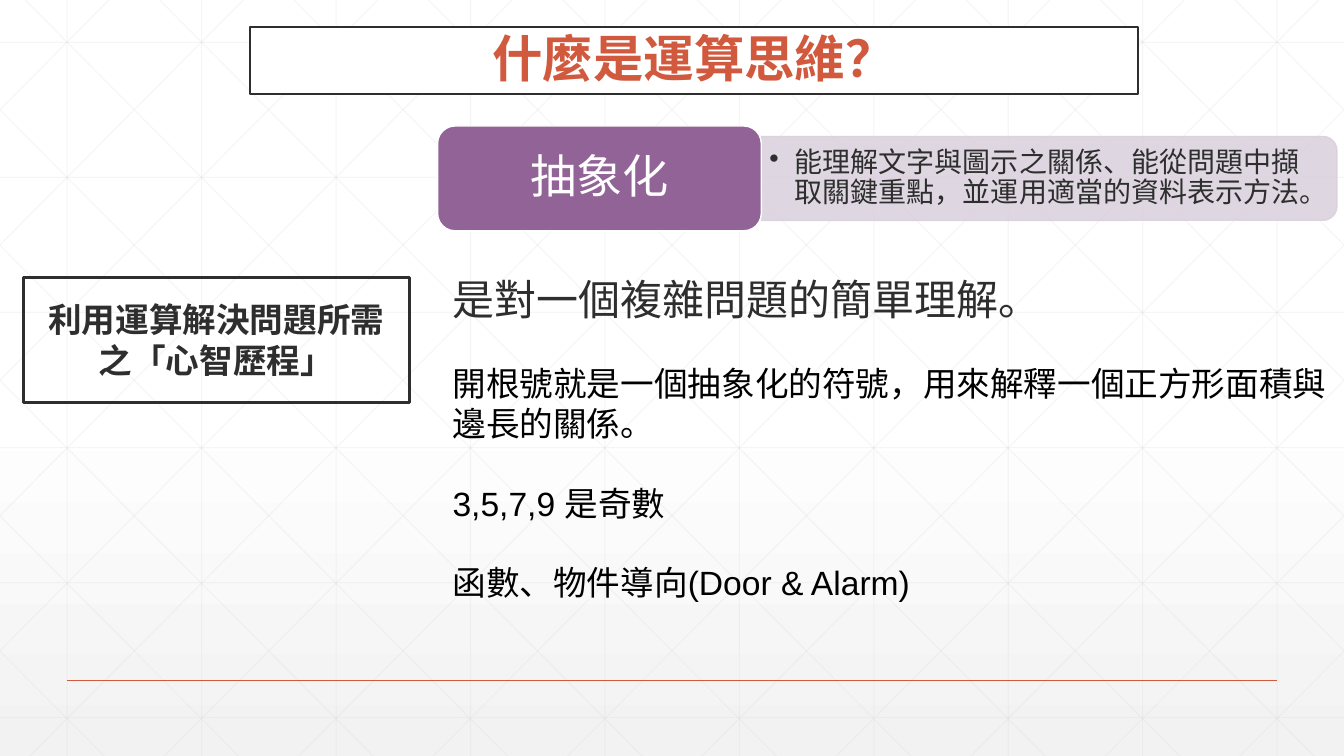
from pptx import Presentation
from pptx import util as u
from pptx.dml import color
from pptx.enum import shapes, text
from pptx.oxml import ns
from lxml import etree

WIDTH, HEIGHT = 13.33, 7.5
PITCH = 4 / 3
INK = color.RGBColor(0x2D, 0x2E, 0x2D)
BLACK = color.RGBColor(0, 0, 0)
WHITE = color.RGBColor(0xFF, 0xFF, 0xFF)
MIST = color.RGBColor(0xF2, 0xF2, 0xF2)
GRID = color.RGBColor(0xD8, 0xD8, 0xD8)
RUST = color.RGBColor(0xD1, 0x5A, 0x3E)
PURPLE = color.RGBColor(0x92, 0x63, 0x97)
LILAC = color.RGBColor(0xDB, 0xD1, 0xDD)
SHAPE = shapes.MSO_SHAPE
ANCHOR = text.MSO_ANCHOR
CENTER = text.PP_ALIGN.CENTER


def set_values(target, values):
    for name, value in values.items():
        setattr(target, name, value)


def set_alpha(shape, percent):
    for fill_color in shape.element.spPr.iter(ns.qn("a:srgbClr")):
        etree.SubElement(fill_color, ns.qn("a:alpha"), val=str(percent * 1000))


def place(shape, box):
    set_values(shape, dict(zip(("left", "top", "width", "height"), map(u.Inches, box))))


def paint(shape, fill=None, line=None, weight=1):
    if fill is None:
        shape.fill.background()
    else:
        shape.fill.solid()
        shape.fill.fore_color.rgb = fill
    shape.line.color.rgb = line
    shape.line.width = u.Pt(weight)


def write(shape, paragraphs, anchor, insets=(0.1, 0.05), **paragraph_format):
    frame = shape.text_frame
    across, down = map(u.Inches, insets)
    set_values(frame, {
        "word_wrap": True, "auto_size": text.MSO_AUTO_SIZE.NONE, "vertical_anchor": anchor,
        "margin_left": across, "margin_right": across,
        "margin_top": down, "margin_bottom": down,
    })
    for index, (words, size, ink, bold, font) in enumerate(paragraphs):
        paragraph = frame.add_paragraph() if index else frame.paragraphs[0]
        set_values(paragraph, paragraph_format)
        if index == 0:
            paragraph.space_before = u.Pt(0)
        run = paragraph.add_run()
        run.text = words
        set_values(run.font, {"size": u.Pt(size), "bold": bold, "name": font})
        run.font.color.rgb = ink
    return frame


def add_block(slide, kind, box, **look):
    shape = slide.shapes.add_shape(kind, *map(u.Inches, box))
    shape.shadow.inherit = False
    paint(shape, **look)
    return shape


def add_line(slide, start, end, ink, weight, alpha=100):
    line = slide.shapes.add_connector(
        shapes.MSO_CONNECTOR.STRAIGHT, *map(u.Inches, (*start, *end)))
    line.line.color.rgb = ink
    line.line.width = u.Pt(weight)
    set_alpha(line, alpha)
    etree.SubElement(line.element.spPr, ns.qn("a:effectLst"))


def draw_backdrop(slide):
    fill = slide.background.fill
    fill.gradient()
    fill.gradient_angle = 270
    for stop, position, shade in zip(fill.gradient_stops, (0.53, 1), (WHITE, MIST)):
        stop.position = position
        stop.color.rgb = shade

    segments = []
    for column in range(10):
        x = PITCH * (column + 0.5)
        segments.append(((x, 0), (x, HEIGHT)))
    for row in range(6):
        y = 0.42 + 1.34 * row
        segments.append(((0, y), (WIDTH, y)))
    slope = 7.45 / HEIGHT
    for step in range(-5, 10):
        x = 0.25 + PITCH * step
        top = max(0, -x / slope)
        bottom = min(HEIGHT, (WIDTH - x) / slope)
        falling = [(x + slope * y, y) for y in (top, bottom)]
        segments += [falling, [(WIDTH - across, y) for across, y in falling]]
    for start, end in segments:
        add_line(slide, start, end, GRID, 0.75, 24)
    add_line(slide, (PITCH / 2, 6.75), (WIDTH - PITCH / 2, 6.75), RUST, 1)


def draw_title(slide, box):
    title = slide.shapes.title
    title.element.getparent().append(title.element)
    place(title, box)
    paint(title, WHITE, INK, 1.5)
    write(title, [("什麼是運算思維？", 36, RUST, True, "Arial")], ANCHOR.BOTTOM,
          alignment=CENTER, line_spacing=0.9)


def draw_definition(slide, box):
    shape = add_block(slide, SHAPE.RECTANGLE, box, line=INK, weight=2.25)
    write(shape, [("利用運算解決問題所需之「心智歷程」", 24, INK, True, "Times New Roman")],
          ANCHOR.MIDDLE, alignment=CENTER)


def draw_concept(slide, box):
    left, top, width, height = box
    label_width = width * 0.36
    band_left, band_width = left + label_width, width - label_width
    band_height = height * 0.8
    band_box = (band_left + (band_width - band_height) / 2,
                top + (height - band_width) / 2, band_height, band_width)
    band = add_block(slide, SHAPE.ROUND_2_SAME_RECTANGLE, band_box, fill=LILAC, line=LILAC)
    band.rotation = 90
    set_alpha(band, 89)

    inset = height * 0.14
    detail = slide.shapes.add_textbox(
        *map(u.Inches, (band_left, top + inset, band_width - 0.04, height - 2 * inset)))
    words = "能理解文字與圖示之關係、能從問題中擷取關鍵重點，並運用適當的資料表示方法。"
    frame = write(detail, [(words, 20, INK, False, "Arial")], ANCHOR.MIDDLE, (0.08, 0.04),
                  line_spacing=0.9)
    properties = frame.paragraphs[0]._p.get_or_add_pPr()
    hanging = u.Inches(0.25)
    properties.set("marL", str(hanging))
    properties.set("indent", str(-hanging))
    etree.SubElement(properties, ns.qn("a:buChar"), char="•")

    label = add_block(slide, SHAPE.ROUNDED_RECTANGLE, (left, top, label_width, height),
                      fill=PURPLE, line=WHITE)
    write(label, [("抽象化", 33, WHITE, False, "Arial")], ANCHOR.MIDDLE, (0.14, 0.07),
          alignment=CENTER, line_spacing=0.9)


def draw_explanation(slide, box):
    body = slide.shapes.add_textbox(*map(u.Inches, box))
    examples = (
        "開根號就是一個抽象化的符號，用來解釋一個正方形面積與邊長的關係。",
        "3,5,7,9 是奇數",
        "函數、物件導向(Door & Alarm)",
    )
    paragraphs = [("是對一個複雜問題的簡單理解。", 30, INK, False, "Arial")]
    paragraphs += [(words, 24, BLACK, False, "Arial") for words in examples]
    write(body, paragraphs, ANCHOR.TOP, (0.1, 0.1), space_before=u.Pt(28))


def main():
    presentation = Presentation()
    presentation.slide_width = u.Inches(WIDTH)
    presentation.slide_height = u.Inches(HEIGHT)
    slide = presentation.slides.add_slide(presentation.slide_layouts[5])
    draw_backdrop(slide)
    draw_definition(slide, (0.23, 2.75, 3.83, 1.24))
    draw_title(slide, (2.48, 0.27, 8.81, 0.66))
    draw_explanation(slide, (4.39, 2.61, 8.93, 4.1))
    draw_concept(slide, (4.34, 1.25, 8.92, 1.04))
    presentation.save("out.pptx")


if __name__ == "__main__":
    main()
